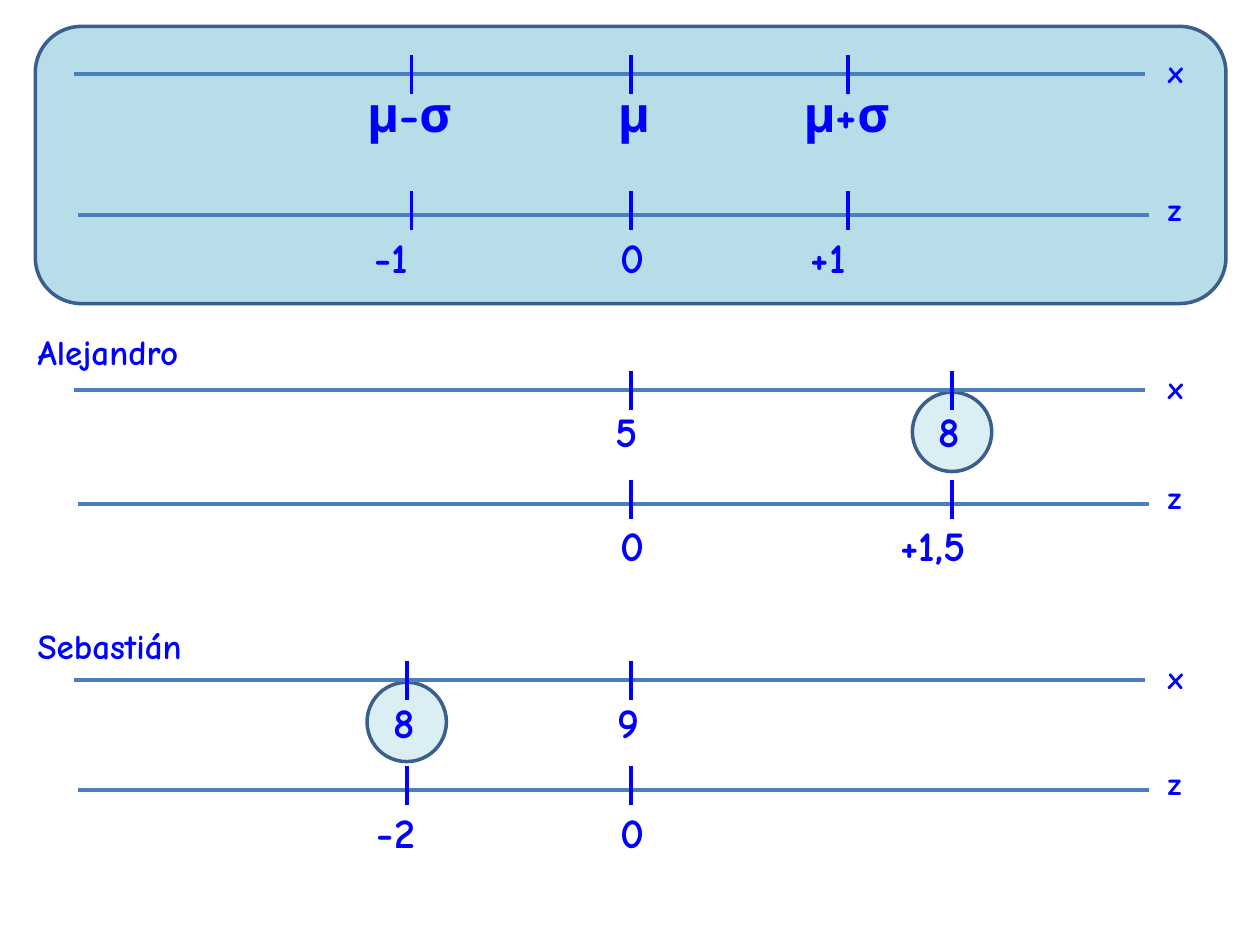
from collections import namedtuple

from lxml import etree
from pptx import Presentation
from pptx.dml.color import RGBColor
from pptx.enum.shapes import MSO_CONNECTOR, MSO_SHAPE
from pptx.enum.text import MSO_AUTO_SIZE
from pptx.oxml.ns import qn
from pptx.util import Inches, Pt

STRAIGHT = MSO_CONNECTOR.STRAIGHT
OVAL = MSO_SHAPE.OVAL
ROUNDED = MSO_SHAPE.ROUNDED_RECTANGLE
FIT_TEXT = MSO_AUTO_SIZE.SHAPE_TO_FIT_TEXT

BLUE = RGBColor(0x00, 0x00, 0xFF)
AXIS_BLUE = RGBColor(0x4B, 0x7E, 0xBC)
OUTLINE = RGBColor(0x3A, 0x5F, 0x8C)
PANEL_FILL = RGBColor(0xB7, 0xDE, 0xE8)
CIRCLE_FILL = RGBColor(0xDB, 0xEE, 0xF4)

FONT = "Comic Neue"
LABEL_WIDTHS = {1: 0.41, 2: 0.61, 3: 0.9, 4: 0.96}  # by number of characters
TICK_LENGTH = 0.31
CIRCLE_SIZE = 0.63

Box = namedtuple("Box", "left top width height")
# column: percent of the region's width; shift: label offset from its tick
Mark = namedtuple("Mark", "column text shift circled", defaults=(0, False))
# row: share of the region's height; start: distance from the region's left;
# rise: how far ticks reach above the axis; lift: the same for the axis name
Axis = namedtuple("Axis", "name start rise lift")

X_AXIS = Axis("x", 0.31, 0.15, 0.22)
Z_AXIS = Axis("z", 0.34, 0.19, 0.25)
AXIS_LENGTH = 8.5


def add_line(page, start, end, color):
    line = page.shapes.add_connector(STRAIGHT, *map(Inches, start + end))
    line.line.color.rgb = color
    line.line.width = Pt(2.25)
    etree.SubElement(line._element.spPr, qn("a:effectLst"))


def add_outlined(page, kind, box, fill):
    shape = page.shapes.add_shape(kind, *map(Inches, box))
    shape.shadow.inherit = False
    shape.fill.solid()
    shape.fill.fore_color.rgb = fill
    shape.line.color.rgb = OUTLINE
    shape.line.width = Pt(2)


def add_text(page, box, text, size, wrap=False):
    frame = page.shapes.add_textbox(*map(Inches, box)).text_frame
    frame.word_wrap = wrap
    frame.auto_size = FIT_TEXT
    span = frame.paragraphs[0].add_run()
    span.text = text
    span.font.name = FONT
    span.font.size = Pt(size)
    span.font.bold = True
    span.font.color.rgb = BLUE


def add_number_line(page, region, axis, row, marks, size=24, gap=0.08):
    """Draw one axis with its name, ticks, labels and circled values."""
    level = region.top + region.height * row
    ticks = [region.left + region.width * mark.column / 100 for mark in marks]

    for tick, mark in zip(ticks, marks):
        if mark.circled:
            circle = Box(tick - CIRCLE_SIZE / 2, level + 0.02, CIRCLE_SIZE, CIRCLE_SIZE)
            add_outlined(page, OVAL, circle, CIRCLE_FILL)

    start = region.left + axis.start
    add_line(page, (start, level), (start + AXIS_LENGTH, level), AXIS_BLUE)
    name_box = Box(region.left + 8.89, level - axis.lift, 0.35, 0.4)
    add_text(page, name_box, axis.name, 18)

    for tick, mark in zip(ticks, marks):
        width = LABEL_WIDTHS[len(mark.text)]
        label_box = Box(tick - width / 2 + mark.shift, level + gap, width, size / 48)
        add_text(page, label_box, mark.text, size)
        top = level - axis.rise
        add_line(page, (tick, top), (tick, top + TICK_LENGTH), BLUE)


def add_reference(page, region):
    """Draw the shaded panel that relates x to z in general."""
    add_outlined(page, ROUNDED, region, PANEL_FILL)
    x_marks = [Mark(31.6, "μ-σ"), Mark(50.05, "μ"), Mark(68.25, "μ+σ")]
    z_marks = [Mark(31.6, "-1", -0.09), Mark(50.05, "0", 0.02), Mark(68.25, "+1", -0.09)]
    add_number_line(page, region, X_AXIS, 0.17, x_marks, size=28, gap=0.03)
    add_number_line(page, region, Z_AXIS, 0.68, z_marks)


def add_student(page, region, name, rows, x_marks, z_marks):
    add_text(page, Box(region.left - 0.08, region.top, 1.57, 0.44), name, 20, wrap=True)
    for axis, row, marks in zip((X_AXIS, Z_AXIS), rows, (x_marks, z_marks)):
        add_number_line(page, region, axis, row, marks)


def main():
    deck = Presentation()
    deck.slide_width, deck.slide_height = Inches(10), Inches(7.5)
    page = deck.slides.add_slide(deck.slide_layouts[6])

    add_reference(page, Box(0.28, 0.21, 9.45, 2.2))
    add_student(
        page, Box(0.28, 2.57, 9.45, 2.01), "Alejandro", (0.26, 0.71),
        [Mark(50.05, "5", -0.02), Mark(77, "8", circled=True)],
        [Mark(50.05, "0", 0.02), Mark(77, "+1,5", -0.03)],
    )
    add_student(
        page, Box(0.28, 4.91, 9.45, 1.94), "Sebastián", (0.25, 0.7),
        [Mark(31.2, "8", circled=True), Mark(50.05, "9")],
        [Mark(31.2, "-2", -0.03), Mark(50.05, "0", 0.02)],
    )
    deck.save("out.pptx")


if __name__ == "__main__":
    main()
